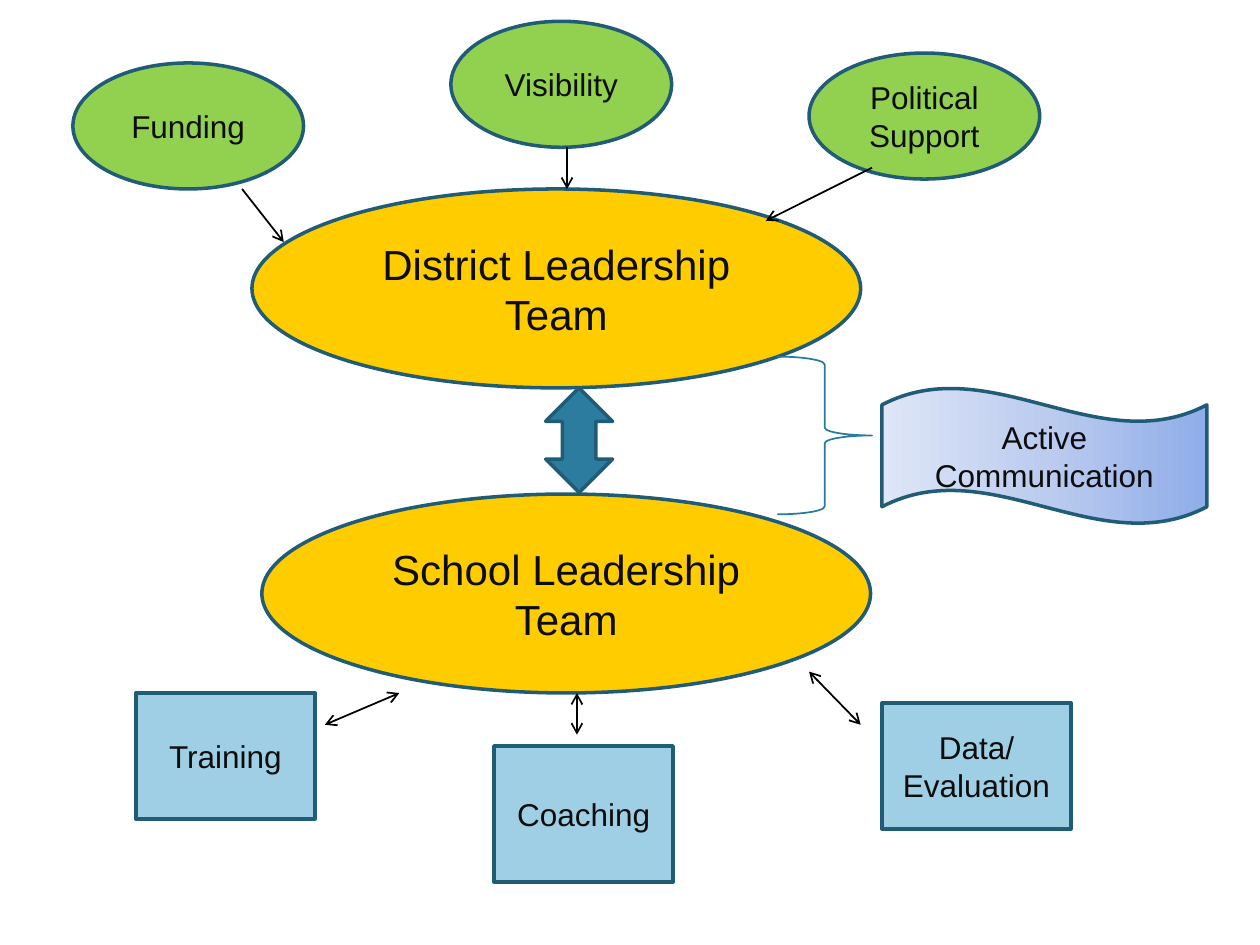
from copy import deepcopy

from pptx import Presentation
from pptx.dml.color import RGBColor
from pptx.enum.shapes import MSO_CONNECTOR, MSO_SHAPE
from pptx.enum.text import MSO_ANCHOR, PP_ALIGN
from pptx.oxml.ns import qn
from pptx.oxml.xmlchemy import OxmlElement
from pptx.util import Cm, Pt

OVAL, RECT = MSO_SHAPE.OVAL, MSO_SHAPE.RECTANGLE
ARROW, BRACE = MSO_SHAPE.UP_DOWN_ARROW, MSO_SHAPE.RIGHT_BRACE
WAVE = MSO_SHAPE.WAVE
STRAIGHT = MSO_CONNECTOR.STRAIGHT
CENTER, MIDDLE = PP_ALIGN.CENTER, MSO_ANCHOR.MIDDLE

GOLD, GREEN, SKY = "FFCC00", "92D050", "9FCFE4"
TEAL, EDGE, INK, BLACK = "2C7C9F", "215C76", "0D0D0D", "000000"
SHADES = ("8FADE9", "BCCCEF", "DEE6F7")

# Left, top, width, height in centimetres
TEAMS = [
    ("District Leadership Team", (5.08, 3.81, 12.27, 4.01)),
    ("School Leadership Team", (5.28, 9.96, 12.27, 4.01)),
]
INPUTS = [
    ("Funding", (1.47, 1.27, 4.65, 2.54)),
    ("Visibility", (9.09, 0.43, 4.45, 2.54)),
    ("Political Support", (16.31, 1.07, 4.65, 2.54)),
]
TASKS = [
    ("Training", (2.74, 13.97, 3.61, 2.54)),
    ("Coaching", (9.96, 15.04, 3.61, 2.74)),
    ("Data/\nEvaluation", (17.78, 14.17, 3.81, 2.54)),
]
# Start x, start y, end x, end y in centimetres
ONE_WAY = [
    (4.88, 3.81, 5.72, 4.88),
    (11.43, 2.97, 11.43, 3.81),
    (17.58, 3.38, 15.44, 4.45),
]
TWO_WAY = [
    (6.55, 14.61, 8.05, 13.97),
    (11.63, 13.97, 11.63, 14.81),
    (16.31, 13.54, 17.35, 14.61),
]


def color(code):
    return RGBColor.from_string(code)


def add_shape(slide, kind, box, fill=None, edge=EDGE, width=2):
    shape = slide.shapes.add_shape(kind, *map(Cm, box))
    shape.shadow.inherit = False
    if fill:
        shape.fill.solid()
        shape.fill.fore_color.rgb = color(fill)
    else:
        shape.fill.background()
    shape.line.color.rgb = color(edge)
    shape.line.width = Pt(width)
    return shape


def add_text(shape, text, size=18):
    frame = shape.text_frame
    frame.word_wrap = True
    frame.vertical_anchor = MIDDLE
    frame.text = text
    for para in frame.paragraphs:
        para.alignment = CENTER
        para.font.name = "Arial"
        para.font.size = Pt(size)
        para.font.color.rgb = color(INK)


def shade(shape, codes):
    """Fill with three evenly spaced colours, running from right to left."""
    fill = shape.fill
    fill.gradient()
    fill.gradient_angle = 180
    stops = shape._element.spPr.find(".//" + qn("a:gsLst"))
    stops.insert(1, deepcopy(stops[0]))
    for index, (stop, code) in enumerate(zip(fill.gradient_stops, codes)):
        stop.position = index / 2
        stop.color.rgb = color(code)


def add_line(slide, ends, tips):
    """Draw a line with an open arrowhead at each end named in tips."""
    line = slide.shapes.add_connector(STRAIGHT, *map(Cm, ends))
    line.line.color.rgb = color(BLACK)
    line.line.width = Pt(1)
    stroke = line.line._get_or_add_ln()
    for tip in tips:
        head = OxmlElement(tip)
        head.set("type", "arrow")
        stroke.append(head)
    line._element.spPr.append(OxmlElement("a:effectLst"))


def main():
    deck = Presentation()
    deck.slide_width, deck.slide_height = Cm(25.4), Cm(19.05)
    slide = deck.slides.add_slide(deck.slide_layouts[6])

    groups = [
        (TEAMS, OVAL, GOLD, 24),
        (INPUTS, OVAL, GREEN, 18),
        (TASKS, RECT, SKY, 18),
    ]
    for items, kind, fill, size in groups:
        for text, box in items:
            add_text(add_shape(slide, kind, box, fill), text, size)

    add_shape(slide, ARROW, (11, 7.82, 1.35, 2.11), TEAL)
    add_shape(slide, BRACE, (15.67, 7.19, 1.91, 3.18), edge="287A9E", width=1)
    banner = add_shape(slide, WAVE, (17.78, 7.82, 6.55, 2.74))
    shade(banner, SHADES)
    add_text(banner, "Active Communication")

    for ends in ONE_WAY:
        add_line(slide, ends, ["a:tailEnd"])
    for ends in TWO_WAY:
        add_line(slide, ends, ["a:headEnd", "a:tailEnd"])

    deck.save("out.pptx")


if __name__ == "__main__":
    main()
